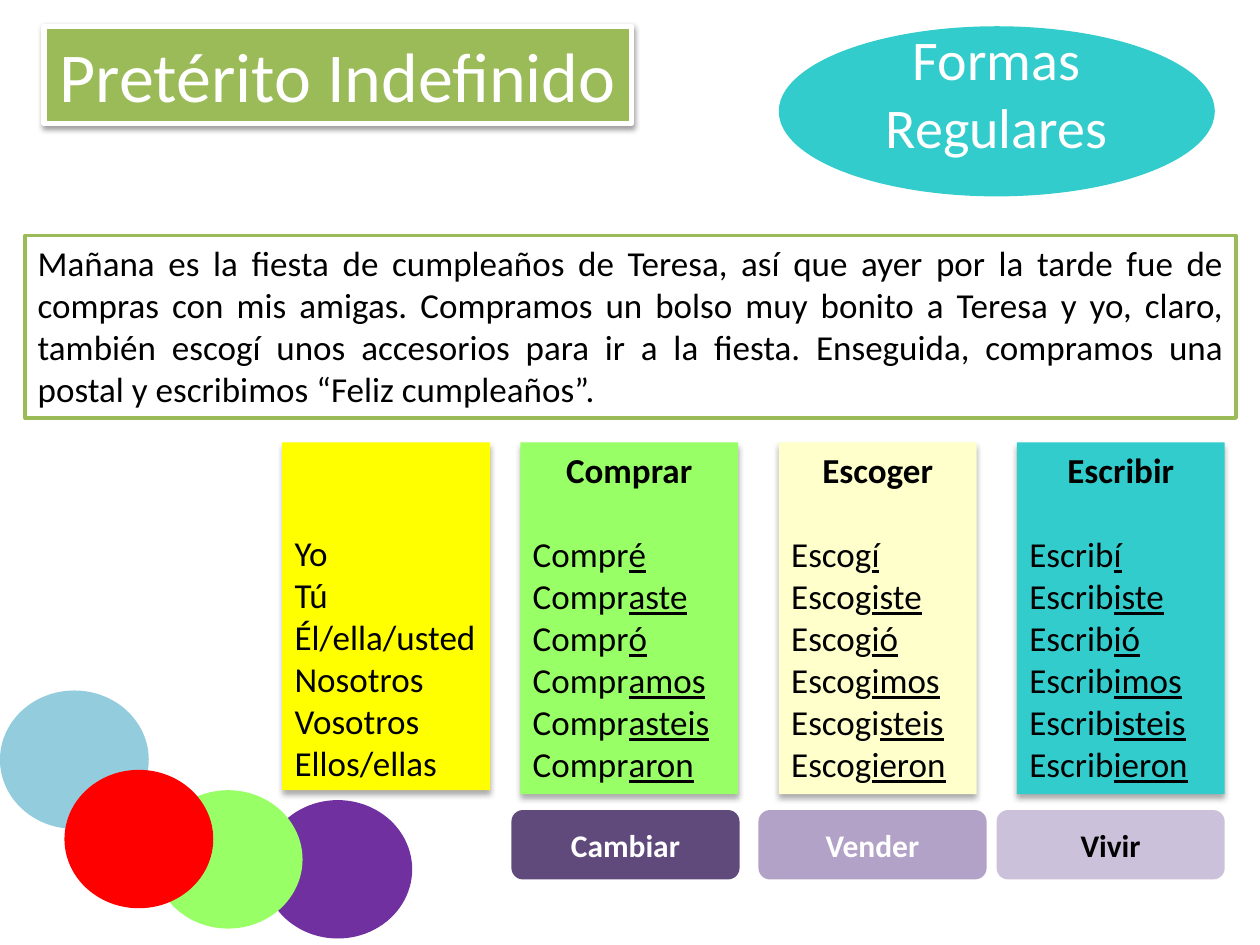
"""Builds a Spanish grammar slide on the regular forms of the Pretérito Indefinido."""
from lxml.etree import SubElement
from pptx import Presentation
from pptx.dml.color import RGBColor
from pptx.enum.shapes import MSO_SHAPE as Kind
from pptx.enum.text import MSO_ANCHOR as Anchor, MSO_AUTO_SIZE as Fit, PP_ALIGN as Align
from pptx.oxml.ns import qn
from pptx.util import Cm, Pt

GREEN, LIME, TEAL = "9BBB59", "99FF66", "33CCCC"
WHITE, BLACK = "FFFFFF", "000000"
VERBS = [
    ("Comprar", 10.49, 4.39, LIME,
     "Compr|é Compr|aste Compr|ó Compr|amos Compr|asteis Compr|aron"),
    ("Escoger", 15.7, 3.99, "FFFFCC",
     "Escog|í Escog|iste Escog|ió Escog|imos Escogi|steis Escog|ieron"),
    ("Escribir", 20.5, 4.19, TEAL,
     "Escrib|í Escrib|iste Escrib|ió Escrib|imos Escrib|isteis Escrib|ieron"),
]
PEOPLE = "Yo Tú Él/ella/usted Nosotros Vosotros Ellos/ellas"
DOTS = [(0, 13.92, "93CDDD"), (5.31, 16.13, "7030A0"), (3.1, 15.93, LIME), (1.3, 15.52, "FF0000")]
TAGS = [("Cambiar", 10.31, "604A7B", WHITE), ("Vender", 15.29, "B3A2C7", WHITE),
        ("Vivir", 20.09, "CCC1DA", BLACK)]
STORY = ("Mañana es la fiesta de cumpleaños de Teresa, así que ayer por la tarde fue de compras "
         "con mis amigas. Compramos un bolso muy bonito a Teresa y yo, claro, también escogí unos "
         "accesorios para ir a la fiesta. Enseguida, compramos una postal y escribimos "
         "“Feliz cumpleaños”.")


def paint(hue):
    return RGBColor.from_string(hue)


def write(frame, *lines, size=20, hue=BLACK, bold=False, align=Align.LEFT, after=0):
    """Adds lines to a frame, underlining what follows a bar."""
    for line in lines:
        first = frame.paragraphs[0]
        para = frame.add_paragraph() if first.runs else first
        para.alignment, para.space_after = align, Pt(after)
        for mark, part in enumerate(line.split("|")):
            run = para.add_run()
            run.text = part
            font = run.font
            font.name, font.size, font.bold = Deck.face, Pt(size), bold
            font.underline = mark == 1
            font.color.rgb = paint(hue)


def shade(shape, blur, drop, alpha):
    effects = shape._element.spPr.find(qn("a:effectLst"))
    shadow = SubElement(effects, qn("a:outerShdw"), blurRad=str(Pt(blur)), dist=str(Pt(drop)),
                        dir="5400000", rotWithShape="0")
    tone = SubElement(shadow, qn("a:srgbClr"), val=BLACK)
    SubElement(tone, qn("a:alpha"), val=str(alpha * 1000))


class Deck:
    face = "Calibri"

    def __init__(self):
        self.show = Presentation()
        self.show.slide_width, self.show.slide_height = Cm(25.4), Cm(19.05)
        self.slide = self.show.slides.add_slide(self.show.slide_layouts[6])

    def block(self, box, fill, kind=Kind.RECTANGLE, line=None, width=0, home=None):
        shape = (home or self.slide).shapes.add_shape(kind, *map(Cm, box))
        shape.shadow.inherit = False
        shape.fill.solid()
        shape.fill.fore_color.rgb = paint(fill)
        if line:
            shape.line.color.rgb, shape.line.width = paint(line), Pt(width)
        else:
            shape.line.fill.background()
        shape.text_frame.word_wrap = True
        shape.text_frame.vertical_anchor = Anchor.TOP
        return shape

    def title(self, text, box):
        shape = self.block(box, GREEN, line=WHITE, width=3)
        shade(shape, 3.1, 1.6, 38)
        shape.text_frame.word_wrap = False
        shape.text_frame.auto_size = Fit.SHAPE_TO_FIT_TEXT
        write(shape.text_frame, text, size=40, hue=WHITE, align=Align.CENTER)

    def oval(self, text, box):
        frame = self.block(box, TEAL, Kind.OVAL).text_frame
        frame.vertical_anchor, frame.margin_bottom = Anchor.MIDDLE, Cm(0.9)
        write(frame, text, size=32, hue=WHITE, align=Align.CENTER)

    def dots(self, items):
        group = self.slide.shapes.add_group_shape()
        for left, top, fill in items:
            self.block((left, top, 3, 2.79), fill, Kind.FLOWCHART_CONNECTOR, home=group)

    def list(self, left, width, fill, forms, head=None, tall=7.09):
        shape = self.block((left, 8.92, width, tall), fill)
        shade(shape, 3.5, 2.2, 32)
        frame = shape.text_frame
        if head:
            write(frame, head, bold=True, align=Align.CENTER, after=24)
        else:
            frame.vertical_anchor = Anchor.BOTTOM
        write(frame, *forms.split())

    def tag(self, text, left, fill, hue):
        frame = self.block((left, 16.33, 4.6, 1.4), fill, Kind.ROUNDED_RECTANGLE).text_frame
        frame.vertical_anchor = Anchor.MIDDLE
        write(frame, text, size=18, hue=hue, bold=True, align=Align.CENTER)

    def story(self, text, box):
        frame = self.block(box, WHITE, line=GREEN, width=2).text_frame
        frame.auto_size = Fit.SHAPE_TO_FIT_TEXT
        write(frame, text, align=Align.JUSTIFY)


def main():
    deck = Deck()
    deck.title("Pretérito Indefinido", (0.89, 0.53, 11.84, 1.96))
    deck.oval("Formas Regulares", (15.7, 0.53, 8.79, 3.43))
    deck.dots(DOTS)
    deck.list(5.69, 4.19, "FFFF00", PEOPLE, tall=7.01)
    for head, left, width, fill, forms in VERBS:
        deck.list(left, width, fill, forms, head)
    for item in TAGS:
        deck.tag(*item)
    deck.story(STORY, (0.51, 4.75, 24.41, 3.68))
    deck.show.save("out.pptx")


if __name__ == "__main__":
    main()
